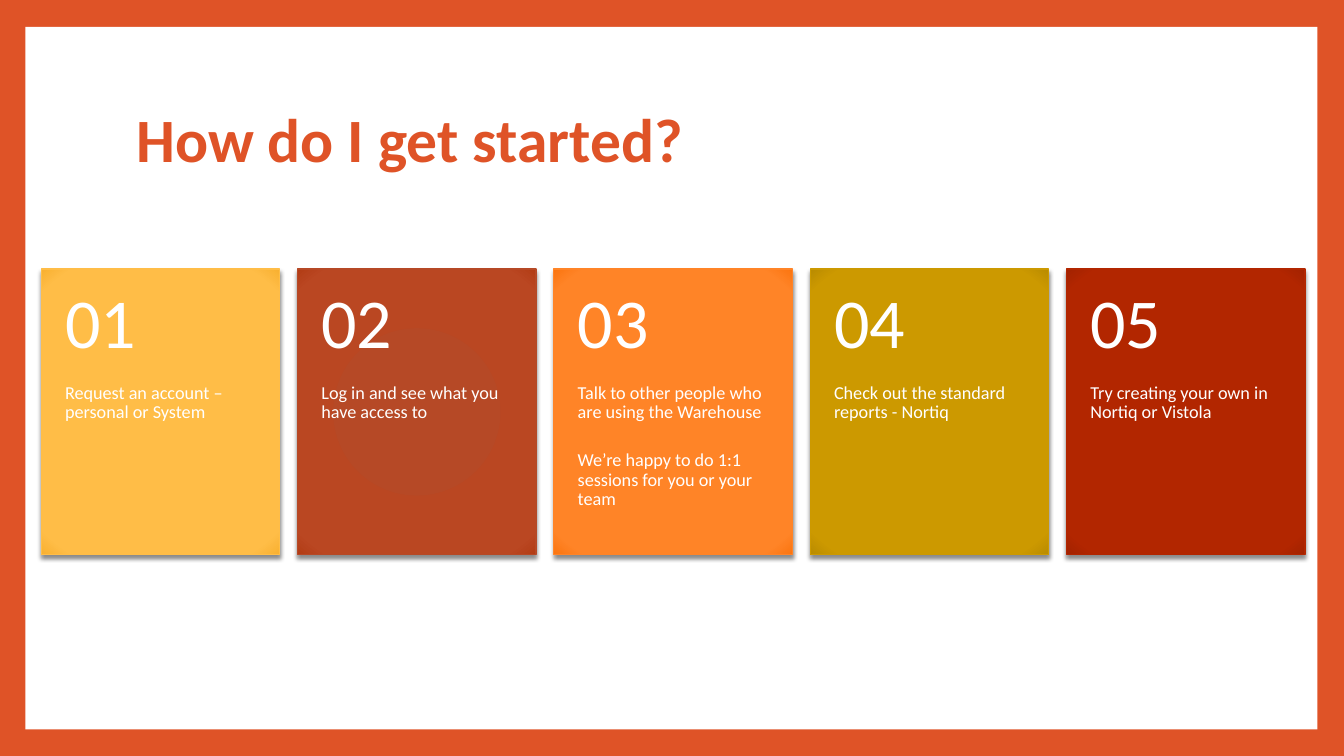
"""Build the "How do I get started?" slide with five numbered step cards."""
from dataclasses import dataclass

from lxml import etree
from pptx import Presentation
from pptx import util as u
from pptx.dml.color import RGBColor
from pptx.enum import shapes, text
from pptx.oxml import parse_xml
from pptx.oxml.ns import nsdecls, qn

FONT = "Calibri"
WHITE = "FFFFFF"
ORANGE = "DF5327"

CARD_LEFT, CARD_TOP, CARD_PITCH = 1.04, 6.78, 6.46
CARD_WIDTH, CARD_HEIGHT = 6.01, 7.2
NUMBER_HEIGHT = 2.88
SIDE_INSET = 0.6


@dataclass(frozen=True)
class Step:
    """Wording and gradient colours of one card."""

    paragraphs: tuple[str, ...]
    line: str
    middle: str
    edge: str


@dataclass(frozen=True)
class Label:
    """Placement and type size of a text block inside a card."""

    top: float
    height: float
    size: float
    anchor: text.MSO_ANCHOR
    inset_top: float
    inset_bottom: float


STEPS = (
    Step(("Request an account – personal or System",), "FFBD47", "FFBD47", "F8B030"),
    Step(("Log in and see what you have access to",), "B64926", "BA4722", "B23C15"),
    Step(
        (
            "Talk to other people who are using the Warehouse",
            "We’re happy to do 1:1 sessions for you or your team",
        ),
        "FF8427", "FF8427", "FB7510",
    ),
    Step(("Check out the standard reports - Nortiq",), "CC9900", "CC9900", "B98B00"),
    Step(("Try creating your own in Nortiq or Vistola",), "B22600", "B22600", "A22200"),
)
BODY = Label(CARD_TOP + NUMBER_HEIGHT, CARD_HEIGHT - NUMBER_HEIGHT, 13,
             text.MSO_ANCHOR.TOP, 0, 0.91)
NUMBER = Label(CARD_TOP, NUMBER_HEIGHT, 50, text.MSO_ANCHOR.MIDDLE, 0.46, 0.46)


def colour(value: str) -> RGBColor:
    """Turn a hex string into a colour."""
    return RGBColor.from_string(value)


def add_span(para, wording: str, size: float, shade: str, bold: bool = False) -> None:
    """Append one formatted run to a paragraph."""
    para.line_spacing = 0.9
    span = para.add_run()
    span.text = wording
    span.font.name = FONT
    span.font.size = u.Pt(size)
    span.font.bold = bold
    span.font.color.rgb = colour(shade)


def add_box(parent, left: float, top: float, width: float, height: float):
    """Add a plain rectangle without a shadow."""
    box = parent.add_shape(shapes.MSO_SHAPE.RECTANGLE,
                           u.Cm(left), u.Cm(top), u.Cm(width), u.Cm(height))
    box.shadow.inherit = False
    return box


def apply_gradient(box, step: Step) -> None:
    """Fill a box with a circular gradient that darkens at its corners."""
    stops = "".join(
        f'<a:gs pos="{position}"><a:srgbClr val="{shade}"/></a:gs>'
        for position, shade in ((0, step.line), (90000, step.middle), (100000, step.edge))
    )
    gradient = parse_xml(
        f'<a:gradFill {nsdecls("a")} rotWithShape="1"><a:gsLst>{stops}</a:gsLst>'
        '<a:path path="circle"><a:fillToRect l="100000" t="100000" r="100000" b="100000"/>'
        "</a:path></a:gradFill>"
    )
    box.fill.background()
    properties = box.element.spPr
    properties.replace(properties.find(qn("a:noFill")), gradient)


def apply_shadow(box) -> None:
    """Give a box a soft shadow falling straight down."""
    effects = box.element.spPr.find(qn("a:effectLst"))
    shadow = etree.SubElement(effects, qn("a:outerShdw"), blurRad=str(u.Pt(3)),
                              dist=str(u.Pt(2)), dir="5400000", rotWithShape="0")
    shade = etree.SubElement(shadow, qn("a:srgbClr"), val="000000")
    etree.SubElement(shade, qn("a:alpha"), val="45000")


def add_label(parent, left: float, label: Label, paragraphs: tuple[str, ...]) -> None:
    """Add a white text block of a card."""
    box = parent.add_textbox(u.Cm(left), u.Cm(label.top),
                             u.Cm(CARD_WIDTH), u.Cm(label.height))
    frame = box.text_frame
    frame.word_wrap = True
    frame.vertical_anchor = label.anchor
    frame.margin_left = frame.margin_right = u.Cm(SIDE_INSET)
    frame.margin_top = u.Cm(label.inset_top)
    frame.margin_bottom = u.Cm(label.inset_bottom)
    for index, wording in enumerate(paragraphs):
        para = frame.add_paragraph() if index else frame.paragraphs[0]
        if index:
            para.space_before = u.Pt(20)
        add_span(para, wording, label.size, WHITE)


def add_card(parent, index: int, step: Step) -> None:
    """Draw one numbered card."""
    left = CARD_LEFT + index * CARD_PITCH
    box = add_box(parent, left, CARD_TOP, CARD_WIDTH, CARD_HEIGHT)
    apply_gradient(box, step)
    apply_shadow(box)
    box.line.color.rgb = colour(step.line)
    box.line.width = u.Pt(0.79)
    add_label(parent, left, BODY, step.paragraphs)
    add_label(parent, left, NUMBER, (f"{index + 1:02d}",))


def add_panel(page) -> None:
    """Draw the white panel behind everything else."""
    panel = add_box(page.shapes, 0.64, 0.68, 32.56, 17.7)
    panel.fill.solid()
    panel.fill.fore_color.rgb = colour(WHITE)
    panel.line.fill.background()
    page.shapes.title.element.addprevious(panel.element)


def format_title(page) -> None:
    """Place and format the title placeholder."""
    title = page.shapes.title
    title.left, title.top = u.Cm(3.18), u.Cm(1.7)
    title.width, title.height = u.Cm(27.43), u.Cm(3.76)
    frame = title.text_frame
    frame.word_wrap = True
    frame.vertical_anchor = text.MSO_ANCHOR.MIDDLE
    para = frame.paragraphs[0]
    para.alignment = text.PP_ALIGN.LEFT
    add_span(para, "How do I get started?", 44, ORANGE, bold=True)


def main() -> None:
    """Build and save the deck."""
    deck = Presentation()
    deck.slide_width, deck.slide_height = u.Cm(33.87), u.Cm(19.05)
    page = deck.slides.add_slide(deck.slide_layouts[5])
    page.background.fill.solid()
    page.background.fill.fore_color.rgb = colour(ORANGE)
    add_panel(page)
    format_title(page)
    cards = page.shapes.add_group_shape()
    for index, step in enumerate(STEPS):
        add_card(cards.shapes, index, step)
    deck.save("out.pptx")


if __name__ == "__main__":
    main()
